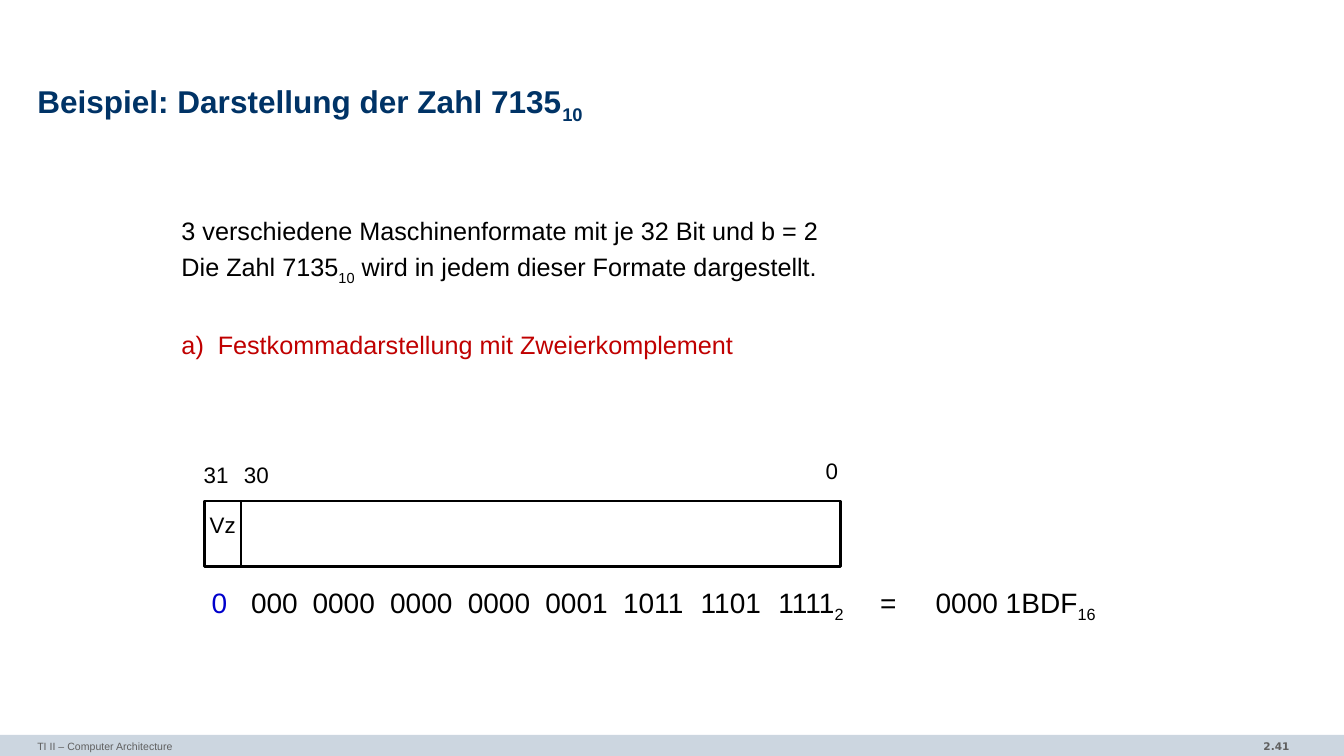
from lxml.etree import SubElement
from pptx import Presentation
from pptx.dml.color import RGBColor
from pptx.enum.shapes import MSO_CONNECTOR, MSO_SHAPE
from pptx.enum.text import MSO_ANCHOR, PP_ALIGN
from pptx.oxml.ns import qn
from pptx.util import Inches, Pt

NAVY = RGBColor(0x00, 0x33, 0x66)
BLACK = RGBColor(0, 0, 0)
WHITE = RGBColor(0xFF, 0xFF, 0xFF)
RED = RGBColor(0xC0, 0, 0)
BLUE = RGBColor(0, 0, 0xCC)
GREY = RGBColor(0x5F, 0x5F, 0x5F)
BAND = RGBColor(0xCC, 0xD6, 0xE0)

TITLE = [("Beispiel: Darstellung der Zahl 7135", {}), ("10", {"sub": True})]
INTRO = [
    [("3 verschiedene Maschinenformate mit je 32 Bit und b = 2", {})],
    [("Die Zahl 7135", {}), ("10", {"sub": True}),
     (" wird in jedem dieser Formate dargestellt.", {})],
    [("a)\tFestkommadarstellung mit Zweierkomplement", {"color": RED})],
]
BIT_GROUPS = ["000", "0000", "0000", "0000", "0001", "1011", "1101", "1111"]
BITS = [("0", {"color": BLUE}), ("\t" + "\t".join(BIT_GROUPS), {}),
        ("2", {"sub": True}), ("\t=\t0000 1BDF", {}), ("16", {"sub": True})]
FOOTER = "TI II – Computer Architecture"
PAGE = "2.41"

WIDTH, HEIGHT = 13.33, 7.5
MARGIN = 0.37
FOOTER_TOP = 7.29
WORD_LEFT, WORD_TOP, WORD_WIDTH, WORD_HEIGHT = 2.03, 4.97, 6.31, 0.65
SIGN_WIDTH = 0.36
GROUP_STEP = 0.77
GROUP_TABS = [0.39] + [1 + GROUP_STEP * i for i in range(len(BIT_GROUPS) - 1)]
BIT_TABS = GROUP_TABS + [6.63, 7.18]
LABELS = [("31", 2.02, 4.57), ("30", 2.42, 4.57), ("0", 8.19, 4.54), ("Vz", 2.08, 5.07)]

presentation = Presentation()
presentation.slide_width = Inches(WIDTH)
presentation.slide_height = Inches(HEIGHT)
slide = presentation.slides.add_slide(presentation.slide_layouts[6])


def add_text(paragraphs, left, top, width, height, size, font="Arial", color=BLACK,
             bold=False, align=PP_ALIGN.LEFT, anchor=MSO_ANCHOR.TOP, inset=0,
             wrap=True, line_spacing=None, gaps=(), tabs=()):
    box = slide.shapes.add_textbox(Inches(left), Inches(top), Inches(width), Inches(height))
    frame = box.text_frame
    frame.word_wrap = wrap
    frame.vertical_anchor = anchor
    frame.margin_left = frame.margin_right = 0
    frame.margin_top = frame.margin_bottom = Inches(inset)
    for index, runs in enumerate(paragraphs):
        paragraph = frame.add_paragraph() if index else frame.paragraphs[0]
        paragraph.alignment = align
        if line_spacing:
            paragraph.line_spacing = line_spacing
        if index:
            paragraph.space_before = Pt(gaps[index - 1])
        if tabs:
            stops = SubElement(paragraph._p.get_or_add_pPr(), qn("a:tabLst"))
            for stop in tabs:
                SubElement(stops, qn("a:tab"), pos=str(Inches(stop)), algn="l")
        for words, style in runs:
            run = paragraph.add_run()
            run.text = words
            run.font.name = font
            run.font.size = Pt(size)
            run.font.bold = bold
            run.font.color.rgb = style.get("color", color)
            if style.get("sub"):
                run.font._element.set("baseline", "-25000")


def add_box(left, top, width, height, fill, outline=None):
    box = slide.shapes.add_shape(MSO_SHAPE.RECTANGLE, Inches(left), Inches(top),
                                 Inches(width), Inches(height))
    box.shadow.inherit = False
    box.fill.solid()
    box.fill.fore_color.rgb = fill
    if outline is None:
        box.line.fill.background()
    else:
        box.line.color.rgb = outline
        box.line.width = Pt(2)


add_box(0, FOOTER_TOP, WIDTH, HEIGHT - FOOTER_TOP, BAND)
add_text([[(PAGE, {})]], 11.0, FOOTER_TOP, 1.79, 0.22, 7.5, font="DejaVu Sans",
         color=GREY, bold=True, align=PP_ALIGN.RIGHT, inset=0.05)
add_text([[(FOOTER, {})]], MARGIN, FOOTER_TOP, 8.72, 0.21, 7.5, color=GREY, inset=0.05)
add_text([TITLE], MARGIN, 0.78, WIDTH - 2 * MARGIN, 0.47, 22.5, color=NAVY, bold=True,
         anchor=MSO_ANCHOR.MIDDLE, line_spacing=0.85)
add_text(INTRO, 1.8, 2.13, 9.61, 2.05, 18, line_spacing=1.02, gaps=(3.8, 30.8), tabs=(0.36,))

add_box(WORD_LEFT, WORD_TOP, WORD_WIDTH, WORD_HEIGHT, WHITE, BLACK)
sign_edge = Inches(WORD_LEFT + SIGN_WIDTH)
divider = slide.shapes.add_connector(MSO_CONNECTOR.STRAIGHT, sign_edge, Inches(WORD_TOP),
                                     sign_edge, Inches(WORD_TOP + WORD_HEIGHT))
divider.line.color.rgb = BLACK
divider.line.width = Pt(2)
SubElement(divider._element.spPr, qn("a:effectLst"))

for label, left, top in LABELS:
    add_text([[(label, {})]], left, top, 0.13 * len(label), 0.27, 16, wrap=False)
add_text([BITS], 2.1, 5.81, 8.8, 0.33, 20, tabs=BIT_TABS)

presentation.save("out.pptx")
